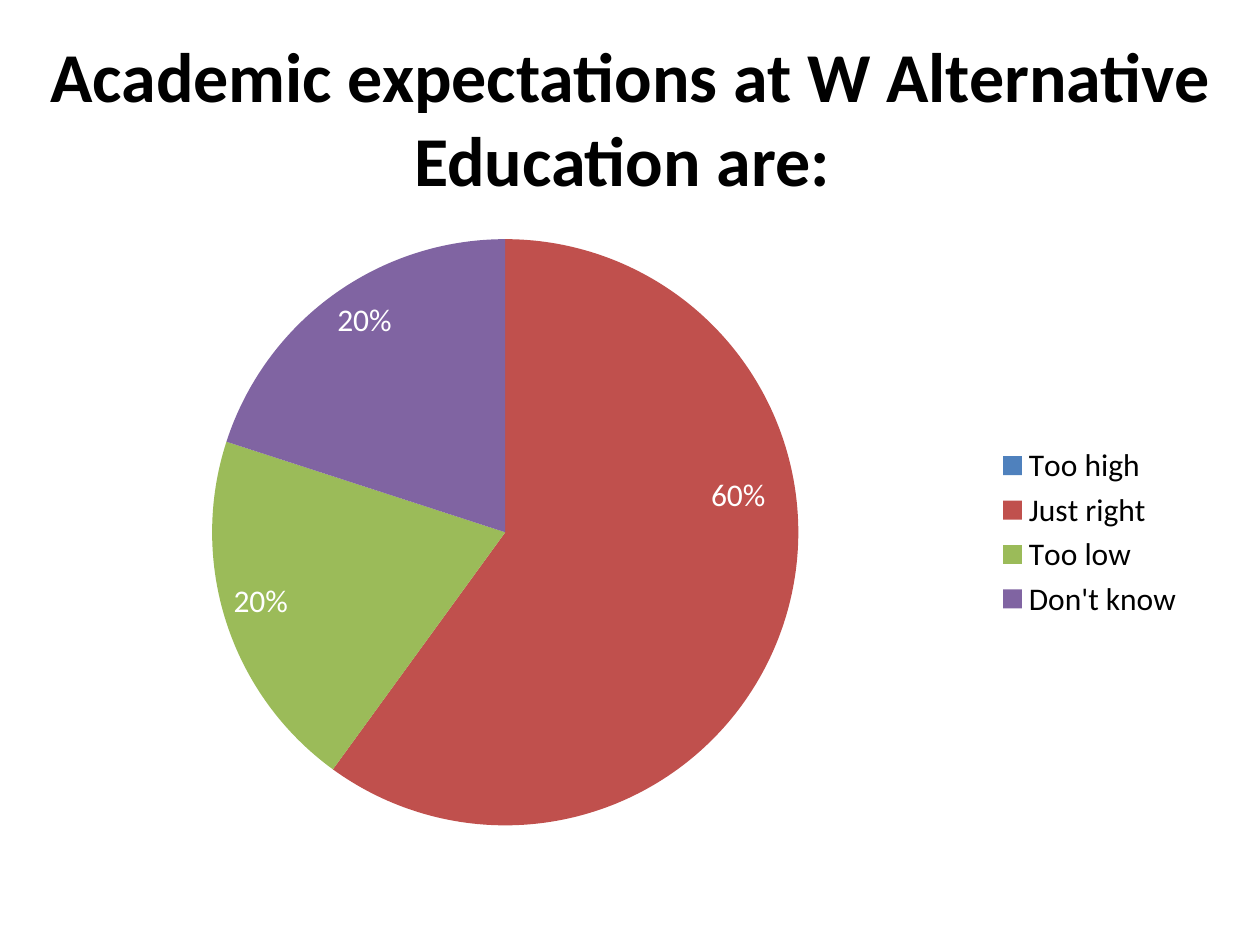
import lxml.etree
import pptx
import pptx.chart.data
import pptx.dml.color
import pptx.enum.chart
import pptx.enum.text
import pptx.oxml
import pptx.oxml.ns
import pptx.util

PX = 9144
FONT = "Calibri"
COLORS = {
    "text": "000000",
    "label": "FFFFFF",
    "Too high": "4F81BD",
    "Just right": "C0504D",
    "Too low": "9BBB59",
    "Don't know": "8064A2",
}
ANSWERS = {"Too high": 0, "Just right": 0.6, "Too low": 0.2, "Don't know": 0.2}


def rgb(name):
    return pptx.dml.color.RGBColor.from_string(COLORS[name])


def scaled(box):
    return [length * PX for length in box]


def style(font, size, color, bold=False):
    font.name = FONT
    font.size = pptx.util.Pt(size)
    font.bold = bold
    font.color.rgb = rgb(color)


def manual_layout(**values):
    layout = pptx.oxml.parse_xml(f"<c:layout {pptx.oxml.ns.nsdecls('c')}/>")
    manual = lxml.etree.SubElement(layout, pptx.oxml.ns.qn("c:manualLayout"))
    for tag, value in values.items():
        lxml.etree.SubElement(manual, pptx.oxml.ns.qn(f"c:{tag}")).set("val", str(value))
    return layout


def place_title(slide, box):
    title = slide.shapes.title
    title.left, title.top, title.width, title.height = scaled(box)
    frame = title.text_frame
    frame.word_wrap = True
    frame.auto_size = pptx.enum.text.MSO_AUTO_SIZE.NONE
    frame.vertical_anchor = pptx.enum.text.MSO_ANCHOR.MIDDLE
    paragraph = frame.paragraphs[0]
    paragraph.alignment = pptx.enum.text.PP_ALIGN.CENTER
    question = paragraph.add_run()
    question.text = "Academic expectations at W Alternative Education are: "
    style(question.font, 40, "text", bold=True)


def format_labels(series):
    inside_end = pptx.enum.chart.XL_LABEL_POSITION.INSIDE_END
    labels = series.data_labels
    labels.show_value = True
    labels.show_percentage = False
    labels.number_format = "0%"
    labels.number_format_is_linked = False
    labels.position = inside_end
    style(labels.font, 18, "label")

    just_right = series.points[1].data_label
    style(just_right.font, 18, "label")
    just_right.position = inside_end
    label_xml = series._element.find(".//" + pptx.oxml.ns.qn("c:dLbl"))
    label_xml.insert(1, manual_layout(x=-0.01, y=-0.17))
    number_format = pptx.oxml.parse_xml(
        f'<c:numFmt {pptx.oxml.ns.nsdecls("c")} formatCode="0%" sourceLinked="0"/>'
    )
    label_xml.insert(2, number_format)

    hidden_zero = pptx.oxml.parse_xml(
        f'<c:dLbl {pptx.oxml.ns.nsdecls("c")}><c:idx val="0"/><c:delete val="1"/></c:dLbl>'
    )
    label_xml.addprevious(hidden_zero)


def place_answers_pie(slide, box):
    data = pptx.chart.data.CategoryChartData(number_format="0%")
    data.categories = list(ANSWERS)
    data.add_series("Series 1", list(ANSWERS.values()))
    pie = slide.shapes.add_chart(
        pptx.enum.chart.XL_CHART_TYPE.PIE, *scaled(box), data
    ).chart
    pie.has_title = False
    style(pie.font, 18, "text")
    pie.has_legend = True
    pie.legend.position = pptx.enum.chart.XL_LEGEND_POSITION.RIGHT
    pie.legend.include_in_layout = False
    style(pie.legend.font, 18, "text")

    plot = pie.plots[0]
    plot.vary_by_categories = True
    series = plot.series[0]
    for index, answer in enumerate(ANSWERS):
        fill = series.points[index].format.fill
        fill.solid()
        fill.fore_color.rgb = rgb(answer)
    format_labels(series)

    plot_area = pie._chartSpace.chart.plotArea
    for layout in plot_area.findall(pptx.oxml.ns.qn("c:layout")):
        plot_area.remove(layout)
    plot_area.insert(0, manual_layout(
        layoutTarget="inner", xMode="edge", yMode="edge", x=0.13, y=0.03, w=0.52, h=0.94
    ))


def main():
    deck = pptx.Presentation()
    deck.slide_width, deck.slide_height = scaled((1000, 750))
    slide = deck.slides.add_slide(deck.slide_layouts[5])
    place_title(slide, (0, 30, 1000, 125))
    place_answers_pie(slide, (50, 175, 900, 495))
    deck.save("out.pptx")


if __name__ == "__main__":
    main()
